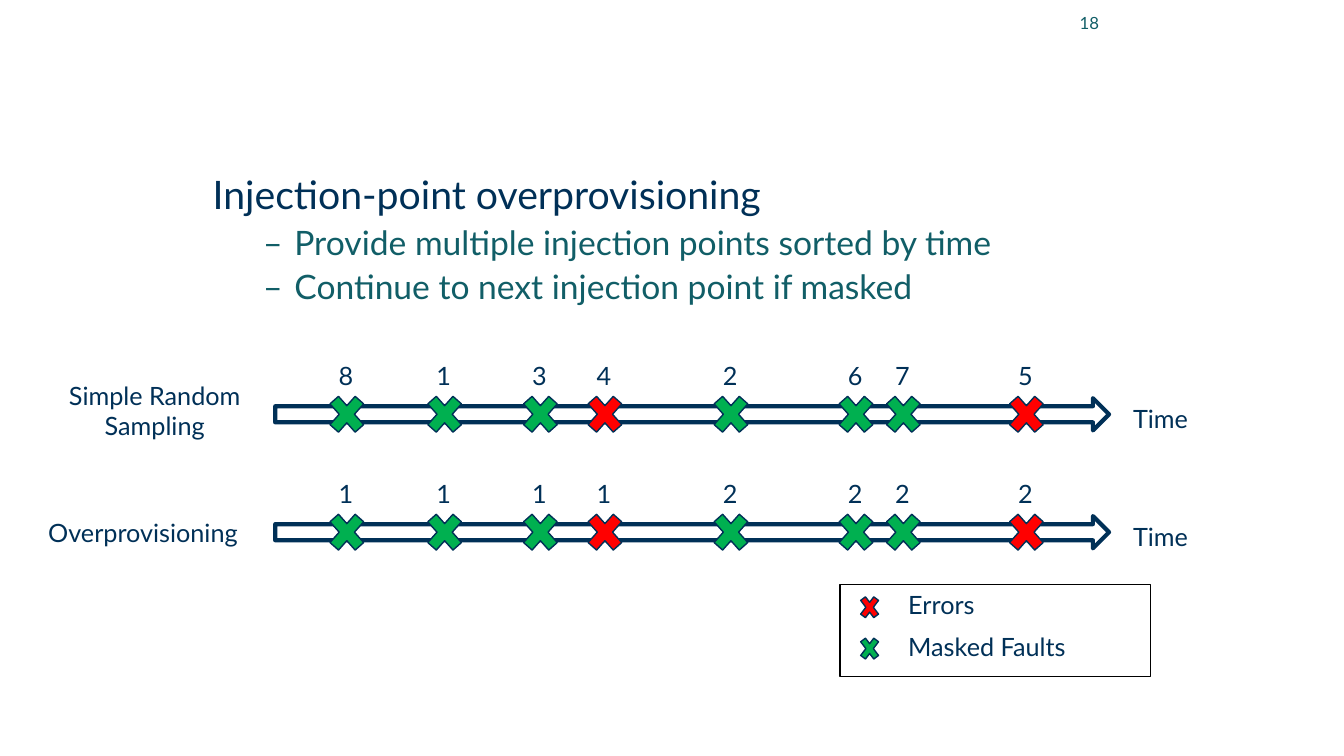
from lxml.etree import SubElement
from pptx import Presentation
from pptx.dml.color import RGBColor
from pptx.enum.shapes import MSO_SHAPE as Shape
from pptx.enum.text import MSO_ANCHOR as Anchor, MSO_AUTO_SIZE as AutoSize, PP_ALIGN as Align
from pptx.oxml.ns import qn
from pptx.util import Inches, Pt

FONT = "Lato"
NAVY, TEAL, BLACK = "003057", "115E67", "000000"
ERROR, MASKED = "FF0000", "00B050"

# Left edge of each injection point, its outcome, and its number in each row.
INJECTIONS = [
    (3.20, MASKED, "8", "1"),
    (4.17, MASKED, "1", "1"),
    (5.12, MASKED, "3", "1"),
    (5.76, ERROR, "4", "1"),
    (7.01, MASKED, "2", "2"),
    (8.25, MASKED, "6", "2"),
    (8.72, MASKED, "7", "2"),
    (9.94, ERROR, "5", "2"),
]


def color(value):
    return RGBColor.from_string(value)


def add_span(para, text, size, ink):
    span = para.add_run()
    span.text = text
    span.font.name = FONT
    span.font.size = Pt(size)
    span.font.color.rgb = color(ink)


def add_label(shapes, box, lines, align=Align.LEFT, size=18, ink=NAVY, anchor=Anchor.TOP):
    frame = shapes.add_textbox(*map(Inches, box)).text_frame
    frame.word_wrap = True
    frame.vertical_anchor = anchor
    for index, line in enumerate(lines):
        para = frame.add_paragraph() if index else frame.paragraphs[0]
        para.alignment = align
        add_span(para, line, size, ink)


def add_outline(shapes, kind, box, ink, width, fill=None):
    shape = shapes.add_shape(kind, *map(Inches, box))
    shape.shadow.inherit = False
    if fill:
        shape.fill.solid()
        shape.fill.fore_color.rgb = color(fill)
    else:
        shape.fill.background()
    shape.line.color.rgb = color(ink)
    shape.line.width = Pt(width)


def set_bullet(para, char, ink):
    """Give the paragraph a hanging bullet, or none when char is None."""
    props = para._p.get_or_add_pPr()
    props.set("marL", str(Inches(0.81 if char else 0)))
    props.set("indent", str(Inches(-0.31 if char else 0)))
    if char:
        SubElement(SubElement(props, qn("a:buClr")), qn("a:srgbClr")).set("val", ink)
        SubElement(props, qn("a:buFont")).set("typeface", FONT)
        SubElement(props, qn("a:buChar")).set("char", char)
    else:
        SubElement(props, qn("a:buNone"))


def fill_body(body, box):
    body.left, body.top, body.width, body.height = map(Inches, box)
    frame = body.text_frame
    frame.auto_size = AutoSize.NONE
    frame.vertical_anchor = Anchor.TOP
    frame.margin_left = frame.margin_right = frame.margin_top = frame.margin_bottom = 0
    points = [
        ("Injection-point overprovisioning", 0, 28, NAVY),
        ("Provide multiple injection points sorted by time", 1, 24, TEAL),
        ("Continue to next injection point if masked", 1, 24, TEAL),
    ]
    for index, (text, level, size, ink) in enumerate(points):
        para = frame.add_paragraph() if index else frame.paragraphs[0]
        para.level = level
        set_bullet(para, "–" if level else None, ink)
        para.alignment = Align.LEFT
        para.line_spacing = 0.9
        para.space_before = Pt(6 if index else 0)
        add_span(para, text, size, ink)


def add_timeline(slide, box, numbers):
    """Draw the time arrow in the box with a numbered cross per injection."""
    left, top, width, height = box
    add_outline(slide.shapes, Shape.RIGHT_ARROW, box, NAVY, 3)
    for (x, outcome, *_), number in zip(INJECTIONS, numbers):
        shapes = slide.shapes.add_group_shape().shapes
        add_outline(shapes, Shape.MATH_MULTIPLY, (x, top - 0.11, 0.48, 0.54), NAVY, 1, outcome)
        add_label(shapes, (x + 0.06, top - 0.42, 0.48, 0.4), [number])
    add_label(slide.shapes, (left + width + 0.14, top, 0.96, 0.4), ["Time"])


def add_legend(slide, box):
    left, top, width, height = box
    shapes = slide.shapes.add_group_shape().shapes
    for index, (name, outcome) in enumerate([("Errors", ERROR), ("Masked Faults", MASKED)]):
        y = top + 0.41 * index
        add_outline(shapes, Shape.MATH_MULTIPLY, (left + 0.17, y + 0.06, 0.25, 0.33),
                    NAVY, 1, outcome)
        add_label(shapes, (left + 0.58, y, 2.4, 0.4), [name])
    add_outline(shapes, Shape.RECTANGLE, box, BLACK, 1)


def main():
    deck = Presentation()
    deck.slide_width, deck.slide_height = Inches(13.33), Inches(7.5)
    slide = deck.slides.add_slide(deck.slide_layouts[1])
    title = slide.shapes.title
    title.element.getparent().remove(title.element)

    fill_body(slide.placeholders[1], (2.11, 1.74, 11, 1.5))
    add_label(slide.shapes, (9.78, -0.02, 1.22, 0.5), ["18"], Align.RIGHT, 12, TEAL, Anchor.MIDDLE)
    add_legend(slide, (8.33, 5.8, 3.08, 0.91))
    _, _, random_order, batch_order = zip(*INJECTIONS)
    add_timeline(slide, (2.73, 3.95, 8.27, 0.32), random_order)
    add_timeline(slide, (2.73, 5.12, 8.27, 0.32), batch_order)
    add_label(slide.shapes, (0.51, 3.72, 2.05, 0.71), ["Simple Random", "Sampling"], Align.CENTER)
    add_label(slide.shapes, (0.38, 5.08, 2.18, 0.4), ["Overprovisioning"])
    deck.save("out.pptx")


if __name__ == "__main__":
    main()
